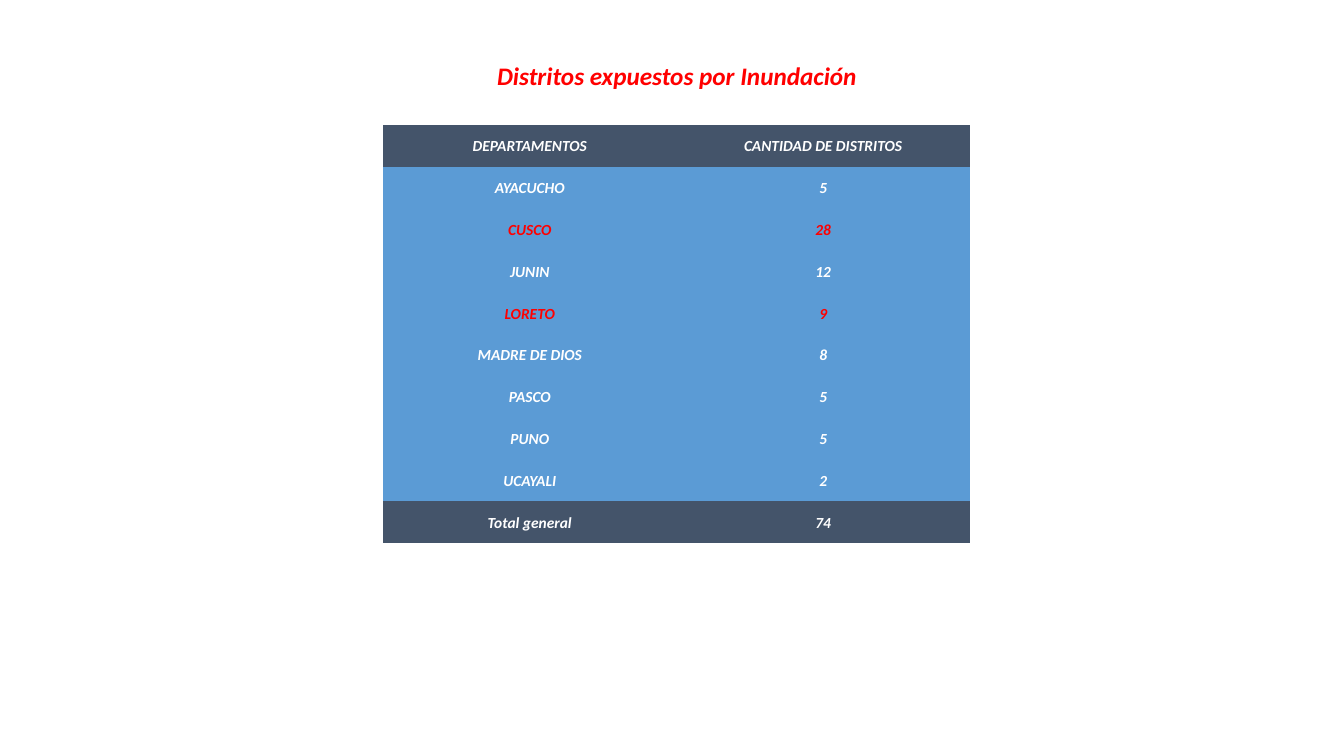
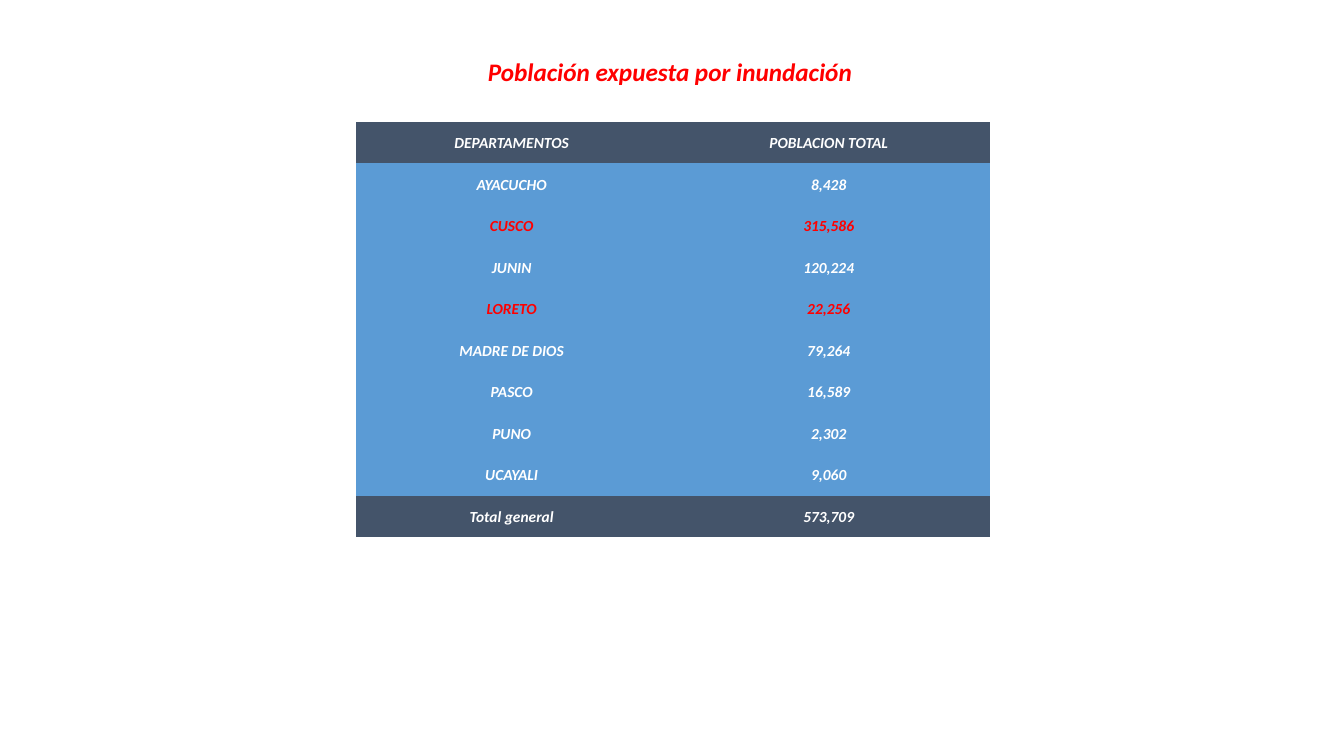
from dataclasses import dataclass

from pptx import Presentation
from pptx.dml.color import RGBColor
from pptx.enum.text import MSO_ANCHOR, MSO_AUTO_SIZE, PP_ALIGN
from pptx.util import Inches, Pt


@dataclass(frozen=True)
class Theme:
    font: str = "Calibri"
    alert: RGBColor = RGBColor(0xFF, 0x00, 0x00)
    light: RGBColor = RGBColor(0xFF, 0xFF, 0xFF)
    band: RGBColor = RGBColor(0x44, 0x54, 0x6A)
    body: RGBColor = RGBColor(0x5B, 0x9B, 0xD5)
    title_size: int = 18
    cell_size: int = 11


THEME = Theme()
TITLE_ONLY = 5
NO_STYLE_NO_GRID = "{2D5ABB26-0587-4C30-8999-92F81FD0307C}"
CELL_FORMAT = {
    "vertical_anchor": MSO_ANCHOR.MIDDLE,
    "margin_left": Inches(0.01),
    "margin_top": Inches(0.01),
    "margin_right": Inches(0.01),
    "margin_bottom": 0,
}
DEPARTMENTS = ["AYACUCHO", "CUSCO", "JUNIN", "LORETO",
               "MADRE DE DIOS", "PASCO", "PUNO", "UCAYALI"]
HIGHLIGHTED = {"CUSCO", "LORETO"}

SLIDES = [
    {
        "title": "Distritos expuestos por Inundación",
        "title_box": (4.81, 0.55, 3.81, 0.4),
        "heading": "CANTIDAD DE DISTRITOS",
        "values": ["5", "28", "12", "9", "8", "5", "5", "2"],
        "total": "74",
        "table_at": (3.8, 1.24),
        "col_widths": (2.91, 2.91),
        "table_height": 4.15,
    },
    {
        "title": "Población expuesta por inundación",
        "title_box": (4.72, 0.51, 3.85, 0.4),
        "heading": "POBLACION TOTAL",
        "values": ["8,428", "315,586", "120,224", "22,256",
                   "79,264", "16,589", "2,302", "9,060"],
        "total": "573,709",
        "table_at": (3.53, 1.21),
        "col_widths": (3.09, 3.2),
        "table_height": 4.12,
    },
]


def set_attributes(target, values):
    for name, value in values.items():
        setattr(target, name, value)


def write_text(tf, text, size, color):
    """Fill a text frame with one centred, bold italic line."""
    p = tf.paragraphs[0]
    p.alignment = PP_ALIGN.CENTER
    r = p.add_run()
    r.text = text
    set_attributes(r.font, {"name": THEME.font, "size": Pt(size),
                            "bold": True, "italic": True})
    r.font.color.rgb = color


def add_title(s, text, box):
    sp = s.shapes.title
    names = ("left", "top", "width", "height")
    set_attributes(sp, dict(zip(names, map(Inches, box))))
    tf = sp.text_frame
    set_attributes(tf, {"word_wrap": False,
                        "auto_size": MSO_AUTO_SIZE.SHAPE_TO_FIT_TEXT,
                        "vertical_anchor": MSO_ANCHOR.TOP})
    write_text(tf, text, THEME.title_size, THEME.alert)


def format_cell(cell, text, fill, color):
    set_attributes(cell, CELL_FORMAT)
    cell.fill.solid()
    cell.fill.fore_color.rgb = fill
    write_text(cell.text_frame, text, THEME.cell_size, color)


def add_department_table(s, rows, at, col_widths, height):
    """Add a table whose first and last rows are dark bands."""
    frame = s.shapes.add_table(
        len(rows), len(col_widths), *map(Inches, at),
        Inches(sum(col_widths)), Inches(height))
    table = frame.table
    set_attributes(table, {"first_row": False, "horz_banding": False})
    table._tbl.tblPr.find("{*}tableStyleId").text = NO_STYLE_NO_GRID
    for column, width in zip(table.columns, col_widths):
        column.width = Inches(width)
    for i, (row, texts) in enumerate(zip(table.rows, rows)):
        row.height = Inches(height / len(rows))
        fill = THEME.band if i in (0, len(rows) - 1) else THEME.body
        color = THEME.alert if texts[0] in HIGHLIGHTED else THEME.light
        for cell, text in zip(row.cells, texts):
            format_cell(cell, text, fill, color)


def add_department_slide(prs, content):
    s = prs.slides.add_slide(prs.slide_layouts[TITLE_ONLY])
    add_title(s, content["title"], content["title_box"])
    rows = [("DEPARTAMENTOS", content["heading"]),
            *zip(DEPARTMENTS, content["values"]),
            ("Total general", content["total"])]
    add_department_table(s, rows, content["table_at"],
                         content["col_widths"], content["table_height"])


def main():
    prs = Presentation()
    prs.slide_width, prs.slide_height = Inches(13.33), Inches(7.5)
    for content in SLIDES:
        add_department_slide(prs, content)
    prs.save("out.pptx")


if __name__ == "__main__":
    main()
